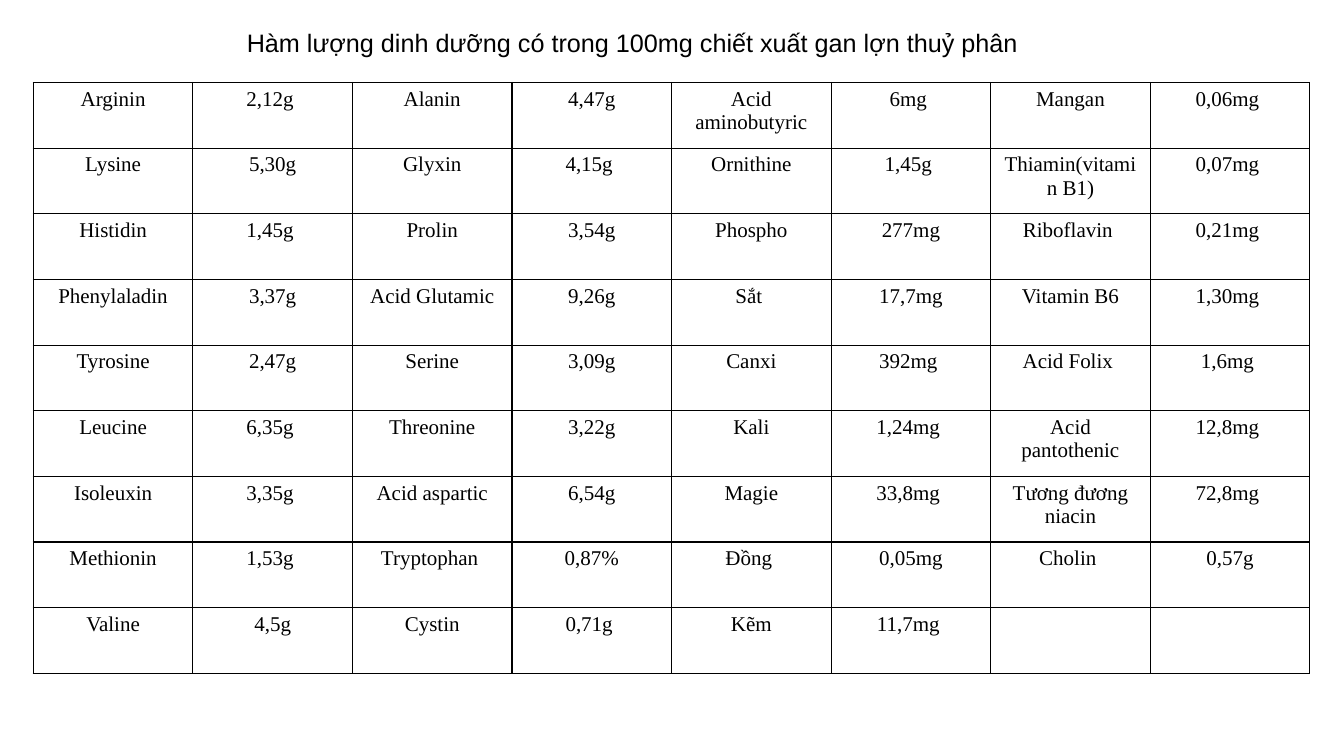
import pptx
import pptx.dml.color
import pptx.enum.text
import pptx.oxml
import pptx.oxml.ns
import pptx.util
from pptx.util import Cm

# Content
TITLE = "Hàm lượng dinh dưỡng có trong 100mg chiết xuất gan lợn thuỷ phân"
ROWS = [
    ("Arginin", "2,12g ", "Alanin", "4,47g", "Acid aminobutyric", "6mg ", "Mangan", "0,06mg "),
    ("Lysine", "5,30g", "Glyxin", "4,15g ", "Ornithine", "1,45g ", "Thiamin(vitamin B1)", "0,07mg "),
    ("Histidin", "1,45g ", "Prolin", "3,54g", "Phospho", "277mg", "Riboflavin ", "0,21mg "),
    ("Phenylaladin", "3,37g", "Acid Glutamic", "9,26g", "Sắt ", "17,7mg", "Vitamin B6", "1,30mg "),
    ("Tyrosine", "2,47g", "Serine", "3,09g", "Canxi", "392mg ", "Acid Folix ", "1,6mg "),
    ("Leucine", "6,35g ", "Threonine", "3,22g", "Kali", "1,24mg ", "Acid pantothenic", "12,8mg "),
    ("Isoleuxin", "3,35g ", "Acid aspartic", "6,54g", "Magie", "33,8mg ", "Tương đương niacin", "72,8mg "),
    ("Methionin", "1,53g ", "Tryptophan ", "0,87%", "Đồng ", "0,05mg", "Cholin ", "0,57g"),
    ("Valine", "4,5g", "Cystin", "0,71g ", "Kẽm", "11,7mg ", "", ""),
]

# Format
HEX = {"ink": "000000", "page": "FFFFFF"}
HEAD = {"name": "Arial", "size": pptx.util.Pt(18)}
BODY = {"name": "Times New Roman", "size": pptx.util.Pt(15)}
PLAIN = {"first_row": False, "horz_banding": False}
LEFT, TOP, WIDE, HIGH = Cm(0.84), Cm(2.08), Cm(32.17), Cm(14.89)
EDGE = pptx.util.Pt(1)


def tint(key):
    return pptx.dml.color.RGBColor.from_string(HEX[key])


def apply(item, form):
    for key, val in form.items():
        setattr(item, key, val)


def write(para, text, form):
    run = para.add_run()
    run.text = text
    apply(run.font, form)
    run.font.color.rgb = tint("ink")


def frame(cell):
    props = cell._tc.get_or_add_tcPr()
    for spot, side in enumerate(("lnL", "lnR", "lnT", "lnB")):
        props.insert(spot, pptx.oxml.parse_xml(
            f'<a:{side} {pptx.oxml.ns.nsdecls("a")} w="{EDGE}"><a:solidFill>'
            f'<a:srgbClr val="{HEX["ink"]}"/></a:solidFill></a:{side}>'))


def main():
    deck = pptx.Presentation()
    apply(deck, {"slide_width": Cm(33.87), "slide_height": Cm(19.05)})
    slide = deck.slides.add_slide(deck.slide_layouts[6])

    # Nutrient table
    table = slide.shapes.add_table(len(ROWS), len(ROWS[0]), LEFT, TOP, WIDE, HIGH).table
    apply(table, PLAIN)
    for line, row in zip(table.rows, ROWS):
        line.height = HIGH // len(ROWS)
        for cell, text in zip(line.cells, row):
            cell.fill.solid()
            cell.fill.fore_color.rgb = tint("page")
            frame(cell)
            if text:
                para = cell.text_frame.paragraphs[0]
                para.alignment = pptx.enum.text.PP_ALIGN.CENTER
                write(para, text, BODY)

    # Title
    box = slide.shapes.add_textbox(Cm(5.97), Cm(0.56), Cm(20.12), Cm(1.03))
    apply(box.text_frame, {"word_wrap": True,
                           "auto_size": pptx.enum.text.MSO_AUTO_SIZE.SHAPE_TO_FIT_TEXT})
    write(box.text_frame.paragraphs[0], TITLE, HEAD)

    deck.save("out.pptx")


if __name__ == "__main__":
    main()
